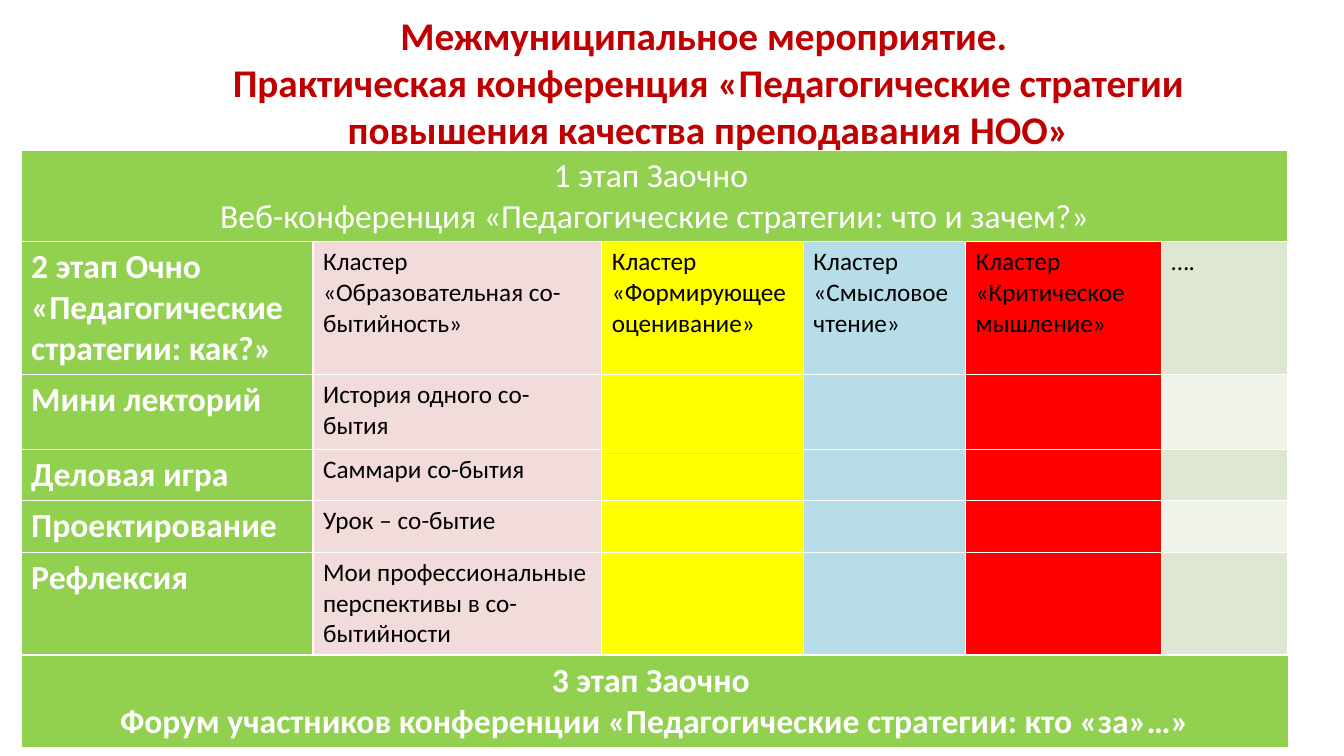
from dataclasses import dataclass

from pptx import Presentation
from pptx.dml.color import RGBColor as Rgb
from pptx.enum.text import MSO_ANCHOR as Anchor, PP_ALIGN as Align
from pptx.oxml import parse_xml
from pptx.oxml.ns import nsdecls
from pptx.util import Pt

COLORS = {
    "title": "C00000", "stage": "92D050", "white": "FFFFFF", "black": "000000",
    "event": "F2DCDB", "assessment": "FFFF00", "reading": "B7DEE8",
    "thinking": "FF0000", "other": "DEE7D1", "other_light": "EFF3EA",
}
CLUSTERS = ["stage", "event", "assessment", "reading", "thinking", "other"]


@dataclass(frozen=True)
class TextFormat:
    size: float
    color: str
    bold: bool
    align: Align = Align.LEFT


TITLE = TextFormat(28, "title", True, Align.CENTER)
STAGE_1 = TextFormat(24, "white", False, Align.CENTER)
STAGE_3 = TextFormat(24, "white", True, Align.CENTER)
ACTIVITY = TextFormat(24, "white", True)
CLUSTER = TextFormat(18, "black", False)


@dataclass(frozen=True)
class Grid:
    top: float
    columns: list[float]
    rows: list[float]


STAGES_GRID = Grid(107.3, [208.5, 206.3, 144, 115.9, 139.7, 90.6], [65.3, 95, 53.5, 36.5, 37, 73.2])
FORUM_GRID = Grid(468, [905], [66.2])
LEFT = 15.1

STAGE_1_LINES = ["1 этап Заочно ", "Веб-конференция «Педагогические стратегии: что и зачем?»"]
STAGE_3_LINES = ["3 этап Заочно ", "Форум участников конференции «Педагогические стратегии: кто «за»…»"]
# Each row lists its cells from the left; each cell lists its paragraphs
PROGRAMME = [
    [["2 этап Очно «Педагогические стратегии: как?»"], ["Кластер «Образовательная со-бытийность»"],
     ["Кластер", "«Формирующее оценивание»"], ["Кластер «Смысловое чтение»"],
     ["Кластер «Критическое мышление»"], ["…."]],
    [["Мини лекторий"], ["История одного со-бытия"]],
    [["Деловая игра"], ["Саммари со-бытия"]],
    [["Проектирование"], ["Урок – со-бытие"]],
    [["Рефлексия"], ["Мои профессиональные перспективы в со-бытийности"]],
]


def style_run(run, style: TextFormat) -> None:
    values = {"name": "Calibri", "size": Pt(style.size), "bold": style.bold}
    for attribute, value in values.items():
        setattr(run.font, attribute, value)
    run.font.color.rgb = Rgb.from_string(COLORS[style.color])


def write_lines(frame, lines: list[str], style: TextFormat) -> None:
    for index, line in enumerate(lines):
        paragraph = frame.add_paragraph() if index else frame.paragraphs[0]
        paragraph.alignment = style.align
        run = paragraph.add_run()
        run.text = line
        style_run(run, style)


def paint_cell(cell, color: str) -> None:
    cell.fill.solid()
    cell.fill.fore_color.rgb = Rgb.from_string(COLORS[color])
    properties = cell._tc.get_or_add_tcPr()
    for index, side in enumerate("LRTB"):
        properties.insert(index, parse_xml(
            f'<a:ln{side} {nsdecls("a")} w="{Pt(1)}"><a:solidFill>'
            f'<a:srgbClr val="{COLORS["white"]}"/></a:solidFill></a:ln{side}>'))


def add_grid(slide, grid: Grid):
    table = slide.shapes.add_table(
        len(grid.rows), len(grid.columns), Pt(LEFT), Pt(grid.top),
        Pt(sum(grid.columns)), Pt(sum(grid.rows))).table
    for column, width in zip(table.columns, grid.columns):
        column.width = Pt(width)
    for row, height in zip(table.rows, grid.rows):
        row.height = Pt(height)
    return table


def add_title(slide) -> None:
    frame = slide.shapes.add_textbox(Pt(126), Pt(9.2), Pt(759.6), Pt(98.6)).text_frame
    frame.word_wrap = True
    frame.vertical_anchor = Anchor.MIDDLE
    write_lines(frame, ["Межмуниципальное мероприятие. ",
                        "Практическая конференция «Педагогические стратегии "
                        "повышения качества преподавания НОО»"], TITLE)


def add_stages(slide) -> None:
    stages = add_grid(slide, STAGES_GRID)
    # Stage 1 spans every column
    for column in range(len(CLUSTERS)):
        paint_cell(stages.cell(0, column), "stage")
    stages.cell(0, 0).merge(stages.cell(0, len(CLUSTERS) - 1))
    write_lines(stages.cell(0, 0).text_frame, STAGE_1_LINES, STAGE_1)
    # Stage 2: activities by cluster, last column in alternating tints
    for row, texts in enumerate(PROGRAMME, start=1):
        for column, cluster in enumerate(CLUSTERS):
            light = cluster == "other" and row % 2 == 0
            paint_cell(stages.cell(row, column), "other_light" if light else cluster)
        for column, lines in enumerate(texts):
            write_lines(stages.cell(row, column).text_frame, lines, CLUSTER if column else ACTIVITY)


def add_forum(slide) -> None:
    forum = add_grid(slide, FORUM_GRID).cell(0, 0)
    paint_cell(forum, "stage")
    write_lines(forum.text_frame, STAGE_3_LINES, STAGE_3)


def main() -> None:
    deck = Presentation()
    deck.slide_width, deck.slide_height = Pt(960), Pt(540)
    slide = deck.slides.add_slide(deck.slide_layouts[6])
    add_title(slide)
    add_stages(slide)
    add_forum(slide)
    deck.save("out.pptx")


if __name__ == "__main__":
    main()
